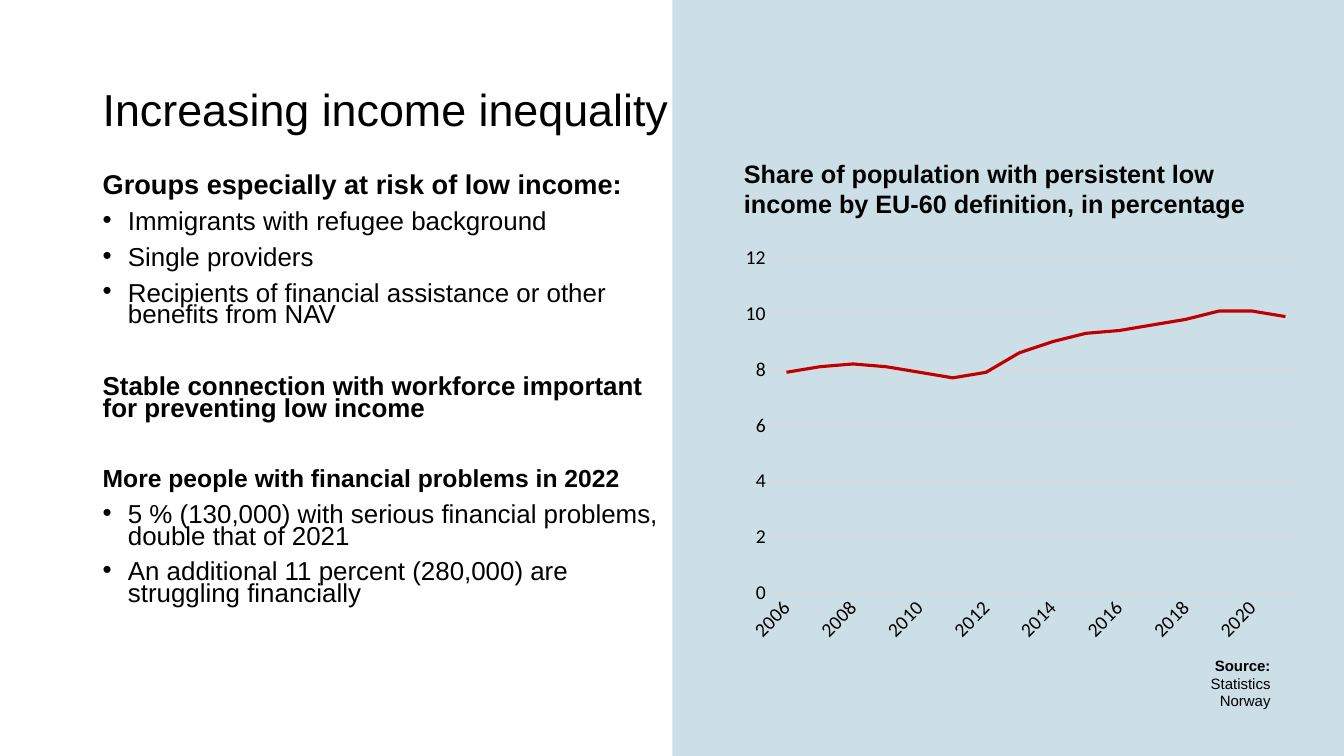
from dataclasses import dataclass

from lxml.etree import SubElement
from pptx import Presentation
from pptx.chart.data import CategoryChartData
from pptx.dml.color import RGBColor
from pptx.enum.chart import XL_CHART_TYPE as ChartType, XL_MARKER_STYLE as Marker, XL_TICK_MARK as Tick
from pptx.enum.shapes import MSO_SHAPE as Shape
from pptx.enum.text import MSO_ANCHOR as Anchor, PP_ALIGN as Align
from pptx.oxml.ns import qn
from pptx.util import Inches, Pt


@dataclass(frozen=True)
class Theme:
    text_font: str = "Arial"
    chart_font: str = "Calibri"
    ink: str = "000000"
    panel: str = "CCDEE6"
    line: str = "C00000"
    grid: str = "D9D9D9"
    title: float = 32
    lead: float = 19.4
    body: float = 18.5
    closing: float = 17.6
    chart_title: float = 18
    axis: float = 14
    source: float = 10.7


THEME = Theme()
FIRST_YEAR = 2006
SHARES = [7.9, 8.1, 8.2, 8.1, 7.9, 7.7, 7.9, 8.6, 9, 9.3, 9.4, 9.6, 9.8, 10.1, 10.1, 9.9]
GROUPS = [
    ("Groups especially at risk of low income:", THEME.lead, [
        "Immigrants with refugee background",
        "Single providers",
        "Recipients of financial assistance or other benefits from NAV",
    ]),
    ("Stable connection with workforce important for preventing low income", THEME.body, []),
    ("More people with financial problems in 2022", THEME.closing, [
        "5 % (130,000) with serious financial problems, double that of 2021",
        "An additional 11 percent (280,000) are struggling financially",
    ]),
]


def style_font(font, size, bold=False, name=THEME.text_font):
    font.name = name
    font.size = Pt(size)
    font.bold = bold
    font.color.rgb = RGBColor.from_string(THEME.ink)


def add_text_frame(slide, left, top, width, height):
    box = slide.shapes.add_textbox(Inches(left), Inches(top), Inches(width), Inches(height))
    box.text_frame.word_wrap = True
    return box.text_frame


def write_run(paragraph, text, size, bold=False):
    run = paragraph.add_run()
    run.text = text
    style_font(run.font, size, bold)


def add_bullet(paragraph):
    properties = paragraph._p.get_or_add_pPr()
    indent = Inches(0.25)
    properties.set("marL", str(indent))
    properties.set("indent", str(-indent))
    SubElement(properties, qn("a:buFont"), typeface=THEME.text_font)
    SubElement(properties, qn("a:buChar"), char="•")


def add_title(slide, left, top, width, height):
    frame = add_text_frame(slide, left, top, width, height)
    frame.vertical_anchor = Anchor.MIDDLE
    paragraph = frame.paragraphs[0]
    paragraph.line_spacing = 0.9
    write_run(paragraph, "Increasing income inequality", THEME.title)


def add_body(slide, left, top, width, height):
    frame = add_text_frame(slide, left, top, width, height)
    for number, (heading, size, bullets) in enumerate(GROUPS):
        paragraph = frame.add_paragraph() if number else frame.paragraphs[0]
        paragraph.line_spacing = 0.7
        paragraph.space_before = Pt(35.5 if number else 0)
        write_run(paragraph, heading, size, bold=True)
        for bullet in bullets:
            paragraph = frame.add_paragraph()
            paragraph.line_spacing = 0.7
            paragraph.space_before = Pt(10)
            add_bullet(paragraph)
            write_run(paragraph, bullet, THEME.body)


def add_line_chart(slide, left, top, width, height):
    data = CategoryChartData()
    data.categories = [str(FIRST_YEAR + offset) for offset in range(len(SHARES))]
    data.add_series("Series 1", SHARES)
    chart = slide.shapes.add_chart(
        ChartType.LINE, Inches(left), Inches(top), Inches(width), Inches(height), data
    ).chart
    chart.has_legend = False
    chart.has_title = False
    style_font(chart.font, THEME.axis, name=THEME.chart_font)

    years, shares = chart.category_axis, chart.value_axis
    for axis in (years, shares):
        axis.major_tick_mark = axis.minor_tick_mark = Tick.NONE
        style_font(axis.tick_labels.font, THEME.axis, name=THEME.chart_font)
    shares.minimum_scale, shares.maximum_scale, shares.major_unit = 0, 12, 2
    shares.format.line.fill.background()
    for line in (years.format.line, shares.major_gridlines.format.line):
        line.color.rgb = RGBColor.from_string(THEME.grid)
        line.width = Pt(0.75)
    years._element.find(qn("c:txPr")).find(qn("a:bodyPr")).set("rot", "-2700000")

    plot = chart.plots[0]
    plot.vary_by_categories = False
    series = plot.series[0]
    series.smooth = False
    series.marker.style = Marker.NONE
    series.format.line.color.rgb = RGBColor.from_string(THEME.line)
    series.format.line.width = Pt(2.25)


def add_chart_panel(slide, left, top, width, height):
    panel = slide.shapes.add_shape(Shape.RECTANGLE, Inches(left), Inches(top), Inches(width), Inches(height))
    panel.shadow.inherit = False
    panel.fill.solid()
    panel.fill.fore_color.rgb = RGBColor.from_string(THEME.panel)
    panel.line.fill.background()

    inner = left + 0.61
    heading = add_text_frame(slide, inner, top + 1.52, 5.55, 0.71).paragraphs[0]
    write_run(heading, "Share of population with persistent low income by EU-60 definition, in percentage",
              THEME.chart_title, bold=True)
    add_line_chart(slide, inner, top + 2.36, 5.75, 4.09)

    source = add_text_frame(slide, left + 4.99, top + 6.46, 1.04, 0.28).paragraphs[0]
    source.alignment = Align.RIGHT
    write_run(source, "Source:", THEME.source, bold=True)
    write_run(source, " Statistics Norway", THEME.source)


def main():
    presentation = Presentation()
    presentation.slide_width = Inches(13.33)
    presentation.slide_height = Inches(7.5)
    slide = presentation.slides.add_slide(presentation.slide_layouts[6])
    add_chart_panel(slide, 6.67, 0, 6.66, 7.5)
    add_title(slide, 0.92, 0.53, 11.5, 1.17)
    add_body(slide, 0.92, 1.7, 5.75, 4.76)
    presentation.save("out.pptx")


if __name__ == "__main__":
    main()
